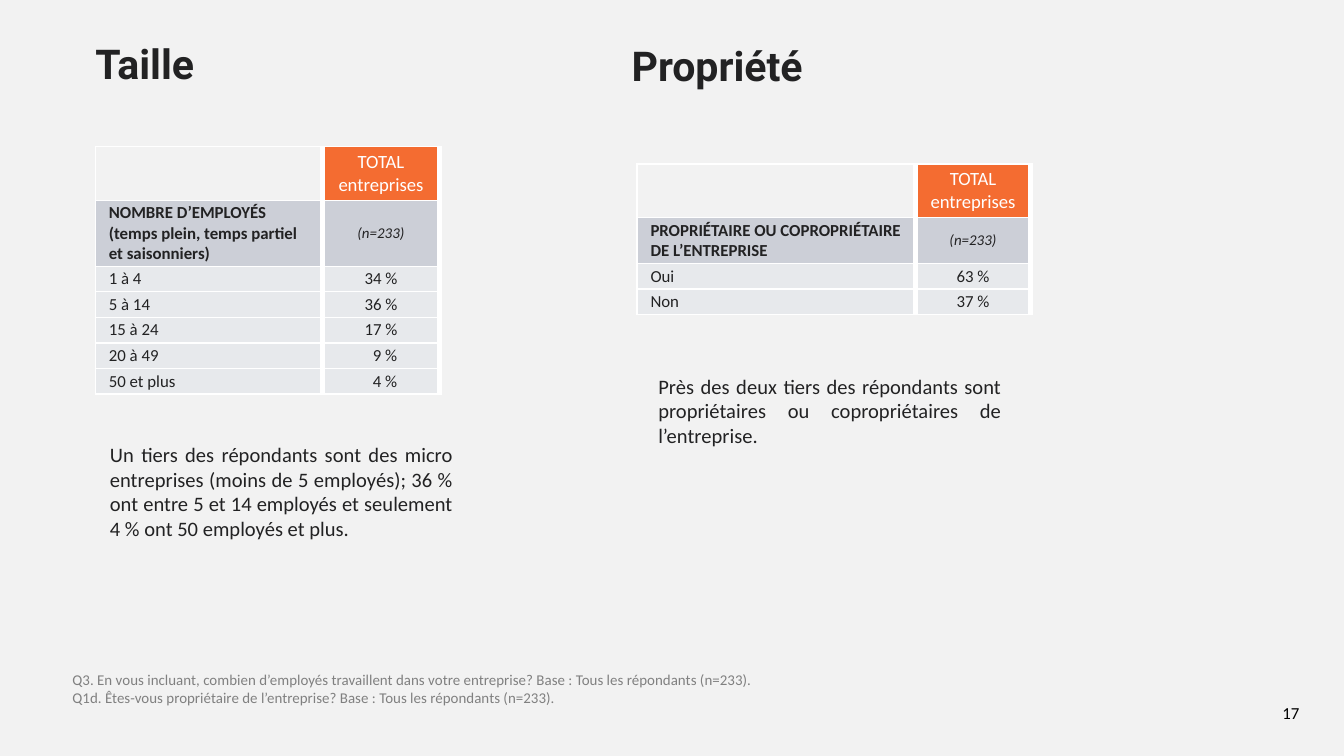
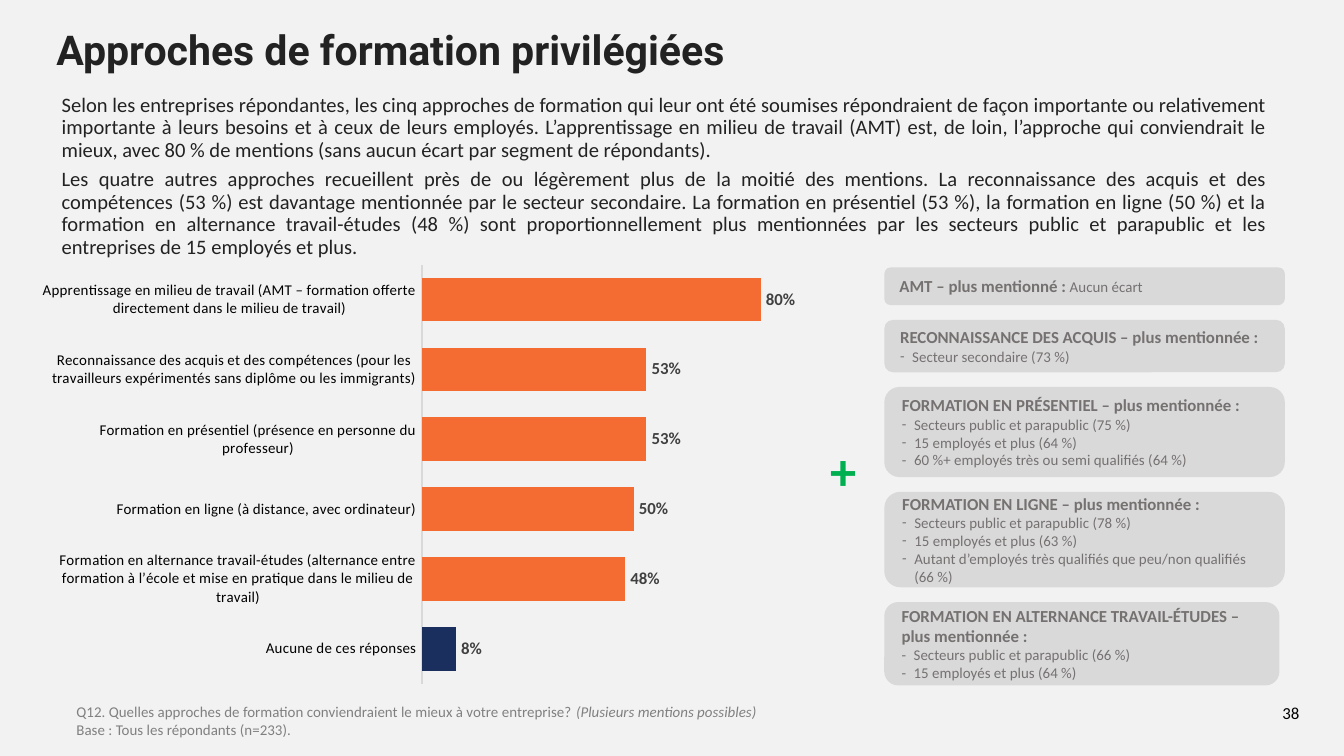
from lxml import etree
from pptx import Presentation
from pptx import util as u
from pptx.chart import data as chart_data
from pptx.dml.color import RGBColor
from pptx.enum import chart as charts, shapes, text
from pptx.oxml import ns, parse_xml

# Shared style
BACKGROUND = RGBColor(0xF2, 0xF2, 0xF2)
INK = RGBColor(0x22, 0x22, 0x23)
BLACK = RGBColor(0, 0, 0)
WHITE = RGBColor(0xFF, 0xFF, 0xFF)
ORANGE = RGBColor(0xF4, 0x6C, 0x31)
NAVY = RGBColor(0x1B, 0x2F, 0x5F)
GREEN = RGBColor(0, 0xB0, 0x50)
HEADING_ROW = RGBColor(0xCC, 0xCF, 0xD7)
BODY_ROW = RGBColor(0xE7, 0xE9, 0xEC)
CARD_FILL = RGBColor(0xD9, 0xD9, 0xD9)
CARD_TEXT = RGBColor(0x76, 0x71, 0x71)
NOTE_TEXT = RGBColor(0x80, 0x80, 0x80)
LABEL_TEXT = RGBColor(0x40, 0x40, 0x40)
BODY_FONT, TITLE_FONT = "Calibri", "Roboto"

ALIGN = text.PP_ALIGN
ANCHOR = text.MSO_ANCHOR
Inches, Pt = u.Inches, u.Pt


def set_font(font, size, color, bold=False, italic=False, name=BODY_FONT):
    font.name, font.size = name, Pt(size)
    font.bold, font.italic = bold, italic
    font.color.rgb = color


def set_indent(paragraph, left, first_line=0):
    properties = paragraph._p.get_or_add_pPr()
    properties.set("marL", str(Inches(left)))
    properties.set("indent", str(Inches(first_line)))
    return properties


def write(frame, paragraphs, align=ALIGN.LEFT, spacing=None, after=None, indent=0, **style):
    """Each paragraph is a string or a list of (string, style changes) runs."""
    for index, runs in enumerate(paragraphs):
        paragraph = frame.paragraphs[0] if index == 0 else frame.add_paragraph()
        paragraph.alignment = align
        if indent:
            set_indent(paragraph, indent)
        if spacing:
            paragraph.line_spacing = spacing
        if after and index < len(paragraphs) - 1:
            paragraph.space_after = Pt(after)
        for content, changes in [(runs, {})] if isinstance(runs, str) else runs:
            run = paragraph.add_run()
            run.text = content
            set_font(run.font, **{**style, **changes})


def add_text(slide, box, paragraphs, anchor=ANCHOR.TOP, inset=(0.1, 0.05), **style):
    frame = slide.shapes.add_textbox(*map(Inches, box)).text_frame
    frame.word_wrap = True
    frame.vertical_anchor = anchor
    frame.margin_left = frame.margin_right = Inches(inset[0])
    frame.margin_top = frame.margin_bottom = Inches(inset[1])
    write(frame, paragraphs, **style)


def add_title(slide, box, title):
    add_text(slide, box, [title], anchor=ANCHOR.MIDDLE, inset=(0.07, 0.04),
             spacing=0.9, size=22, color=INK, bold=True, name=TITLE_FONT)


def add_body(slide, box, paragraphs, **style):
    add_text(slide, box, paragraphs, inset=(0.1, 0), align=ALIGN.JUSTIFY,
             indent=0.01, size=11, color=INK, **style)


def add_page(presentation, number, note_position, notes):
    """Slide with its background, page number and question notes."""
    slide = presentation.slides.add_slide(presentation.slide_layouts[6])
    slide.background.fill.solid()
    slide.background.fill.fore_color.rgb = BACKGROUND
    add_text(slide, (9.35, 5.13, 0.51, 0.3), [str(number)], anchor=ANCHOR.BOTTOM,
             align=ALIGN.CENTER, size=9, color=BLACK)
    add_text(slide, (*note_position, 8.08, 0.37), notes, size=8, color=NOTE_TEXT)
    return slide


# Tables
def fill_cell(cell, paragraphs, fill, left_line=0.75, left_margin=0.1, **style):
    for side, width in (("L", left_line), ("R", 3), ("T", 0.75), ("B", 0.75)):
        cell._tc.get_or_add_tcPr().append(parse_xml(
            f'<a:ln{side} {ns.nsdecls("a")} w="{Pt(width)}"><a:solidFill>'
            f'<a:srgbClr val="{WHITE}"/></a:solidFill></a:ln{side}>'))
    if fill is None:
        cell.fill.background()
    else:
        cell.fill.solid()
        cell.fill.fore_color.rgb = fill
    cell.vertical_anchor = ANCHOR.MIDDLE
    cell.margin_left, cell.margin_right = Inches(left_margin), Inches(0.1)
    cell.margin_top = cell.margin_bottom = Inches(0.02)
    write(cell.text_frame, paragraphs, **style)


def add_share_table(slide, position, widths, heading, answers):
    heights = [0.4] + [0.19] * (len(answers) + 1)
    frame = slide.shapes.add_table(len(heights), 2, *map(
        Inches, (*position, sum(widths), sum(heights))))
    table = frame.table
    table.first_row = table.horz_banding = False
    for column, width in zip(table.columns, widths):
        column.width = Inches(width)
    for row, height in zip(table.rows, heights):
        row.height = Inches(height)

    value_style = {"left_line": 3, "align": ALIGN.CENTER}
    fill_cell(table.cell(0, 0), [], None)
    fill_cell(table.cell(0, 1), ["TOTAL", "entreprises"], ORANGE,
              size=10, color=WHITE, **value_style)
    fill_cell(table.cell(1, 0), [heading], HEADING_ROW, size=9, color=INK, bold=True)
    fill_cell(table.cell(1, 1), ["(n=233)"], HEADING_ROW,
              size=8, color=INK, italic=True, **value_style)
    for row, (answer, share) in enumerate(answers, 2):
        fill_cell(table.cell(row, 0), [answer], BODY_ROW, size=9, color=INK)
        # One-digit shares move right so that the units line up
        fill_cell(table.cell(row, 1), [f"{share} %"], BODY_ROW, size=9, color=INK,
                  left_margin=0.1 if share > 9 else 0.16, **value_style)


# Bar chart
def add_approach_chart(slide, box, approaches):
    data = chart_data.CategoryChartData(number_format="0%")
    data.categories = [name for name, _ in approaches]
    data.add_series("Series 1", [share for _, share in approaches])
    chart = slide.shapes.add_chart(
        charts.XL_CHART_TYPE.BAR_CLUSTERED, *map(Inches, box), data).chart
    chart.has_legend = chart.has_title = False
    set_font(chart.font, 10, BLACK, name="TeX Gyre Adventor")

    axis = chart.category_axis
    axis.reverse_order = True
    axis.major_tick_mark = axis.minor_tick_mark = charts.XL_TICK_MARK.NONE
    axis.format.line.color.rgb = CARD_FILL
    axis.format.line.width = Pt(0.75)
    set_font(axis.tick_labels.font, 8, BLACK)
    values = chart.value_axis
    values.visible = values.has_major_gridlines = False
    values.minimum_scale, values.maximum_scale = 0, 0.88

    plot = chart.plots[0]
    plot.gap_width = 60
    plot.vary_by_categories = False
    series = plot.series[0]
    series.format.fill.solid()
    series.format.fill.fore_color.rgb = NAVY
    for index in range(len(approaches) - 1):
        fill = series.points[index].format.fill
        fill.solid()
        fill.fore_color.rgb = ORANGE
    labels = series.data_labels
    labels.show_value = True
    labels.number_format, labels.number_format_is_linked = "0%", False
    labels.position = charts.XL_LABEL_POSITION.OUTSIDE_END
    set_font(labels.font, 9, LABEL_TEXT, bold=True)

    # Fixed inner plot area
    plot_area = chart._chartSpace.chart.plotArea
    for layout in plot_area.findall(ns.qn("c:layout")):
        plot_area.remove(layout)
    layout = etree.Element(ns.qn("c:layout"))
    manual = etree.SubElement(layout, ns.qn("c:manualLayout"))
    for tag, value in (("layoutTarget", "inner"), ("xMode", "edge"), ("yMode", "edge"),
                       ("x", 0.506), ("y", 0.012), ("w", 0.484), ("h", 0.963)):
        etree.SubElement(manual, ns.qn(f"c:{tag}")).set("val", str(value))
    plot_area.insert(0, layout)


# Cards beside the chart
def add_card(slide, box, heading, items):
    card = slide.shapes.add_shape(
        shapes.MSO_SHAPE.ROUNDED_RECTANGLE, *map(Inches, box))
    card.shadow.inherit = False
    card.fill.solid()
    card.fill.fore_color.rgb = CARD_FILL
    card.line.fill.background()
    frame = card.text_frame
    frame.word_wrap = True
    frame.vertical_anchor = ANCHOR.MIDDLE
    write(frame, [heading] + [[(item, {"size": 8, "bold": False})] for item in items],
          size=9, color=CARD_TEXT, bold=True)
    for paragraph in frame.paragraphs[1:]:
        properties = set_indent(paragraph, 0.09, -0.09)
        etree.SubElement(properties, ns.qn("a:buFont")).set("typeface", BODY_FONT)
        etree.SubElement(properties, ns.qn("a:buChar")).set("char", "-")


def add_cards(slide, left, top, gap, cards):
    for width, height, heading, items in cards:
        add_card(slide, (left, top, width, height), heading, items)
        top += height + gap


# Slides
def build_profile_slide(presentation):
    slide = add_page(presentation, 17, (0.44, 4.94), [
        "Q3. En vous incluant, combien d’employés travaillent dans votre entreprise? "
        "Base : Tous les répondants (n=233).",
        "Q1d. Êtes-vous propriétaire de l’entreprise? Base : Tous les répondants (n=233)."])

    add_title(slide, (0.64, 0.23, 3.26, 0.52), "Taille")
    add_share_table(
        slide, (0.71, 1.09), (1.69, 0.87),
        "NOMBRE D’EMPLOYÉS (temps plein, temps partiel et saisonniers)",
        [("1 à 4", 34), ("5 à 14", 36), ("15 à 24", 17), ("20 à 49", 9), ("50 et plus", 4)])
    add_body(slide, (0.71, 3.29, 2.76, 0.74), [
        "Un tiers des répondants sont des micro entreprises (moins de 5 employés); 36 % "
        "ont entre 5 et 14 employés et seulement 4 % ont 50 employés et plus."])

    add_title(slide, (4.63, 0.33, 3.26, 0.36), "Propriété")
    add_share_table(
        slide, (4.74, 1.22), (2.07, 0.86),
        "PROPRIÉTAIRE OU COPROPRIÉTAIRE DE L’ENTREPRISE", [("Oui", 63), ("Non", 37)])
    add_body(slide, (4.79, 2.78, 2.76, 0.56), [
        "Près des deux tiers des répondants sont propriétaires ou copropriétaires "
        "de l’entreprise."])


def build_approaches_slide(presentation):
    slide = add_page(presentation, 38, (0.47, 5.18), [
        [("Q12. Quelles approches de formation conviendraient le mieux à votre entreprise? ", {}),
         ("(Plusieurs mentions possibles)", {"italic": True})],
        "Base : Tous les répondants (n=233)."])
    add_title(slide, (0.35, 0.16, 9.38, 0.46), "Approches de formation privilégiées")
    add_body(slide, (0.35, 0.7, 9.18, 1.23), [
        "Selon les entreprises répondantes, les cinq approches de formation qui leur ont été "
        "soumises répondraient de façon importante ou relativement importante à leurs besoins "
        "et à ceux de leurs employés. L’apprentissage en milieu de travail (AMT) est, de loin, "
        "l’approche qui conviendrait le mieux, avec 80 % de mentions (sans aucun écart par "
        "segment de répondants).",
        "Les quatre autres approches recueillent près de ou légèrement plus de la moitié des "
        "mentions. La reconnaissance des acquis et des compétences (53 %) est davantage "
        "mentionnée par le secteur secondaire. La formation en présentiel (53 %), la formation "
        "en ligne (50 %) et la formation en alternance travail-études (48 %) sont "
        "proportionnellement plus mentionnées par les secteurs public et parapublic et les "
        "entreprises de 15 employés et plus."], spacing=Pt(12), after=4)
    add_approach_chart(slide, (0.24, 1.93, 5.73, 3.24), [
        ("Apprentissage en milieu de travail (AMT – formation offerte directement dans le "
         "milieu de travail)", 0.8),
        ("Reconnaissance des acquis et des compétences (pour les travailleurs expérimentés "
         "sans diplôme ou les immigrants)", 0.53),
        ("Formation en présentiel (présence en personne du professeur)", 0.53),
        ("Formation en ligne (à distance, avec ordinateur)", 0.5),
        ("Formation en alternance travail-études (alternance entre formation à l’école et "
         "mise en pratique dans le milieu de travail)", 0.48),
        ("Aucune de ces réponses", 0.08)])
    add_cards(slide, 6.58, 1.99, 0.11, [
        (2.98, 0.28, [("AMT – plus mentionné : ", {}),
                      ("Aucun écart", {"size": 8, "bold": False})], []),
        (2.98, 0.39, "RECONNAISSANCE DES ACQUIS – plus mentionnée :",
         ["Secteur secondaire (73 %)"]),
        (2.98, 0.67, "FORMATION EN PRÉSENTIEL – plus mentionnée :",
         ["Secteurs public et parapublic (75 %)", "15 employés et plus (64 %)",
          "60 %+ employés très ou semi qualifiés (64 %)"]),
        (2.98, 0.71, "FORMATION EN LIGNE – plus mentionnée :",
         ["Secteurs public et parapublic (78 %)", "15 employés et plus (63 %)",
          "Autant d’employés très qualifiés que peu/non qualifiés (66 %)"]),
        (2.94, 0.62, "FORMATION EN ALTERNANCE TRAVAIL-ÉTUDES – plus mentionnée :",
         ["Secteurs public et parapublic (66 %)", "15 employés et plus (64 %)"])])
    add_text(slide, (5.78, 3.21, 0.99, 0.57), ["+"], align=ALIGN.CENTER,
             size=28, color=GREEN, bold=True)


def main():
    presentation = Presentation()
    presentation.slide_width = Inches(10)
    presentation.slide_height = presentation.slide_width * 9 // 16
    build_profile_slide(presentation)
    build_approaches_slide(presentation)
    presentation.save("out.pptx")


if __name__ == "__main__":
    main()
